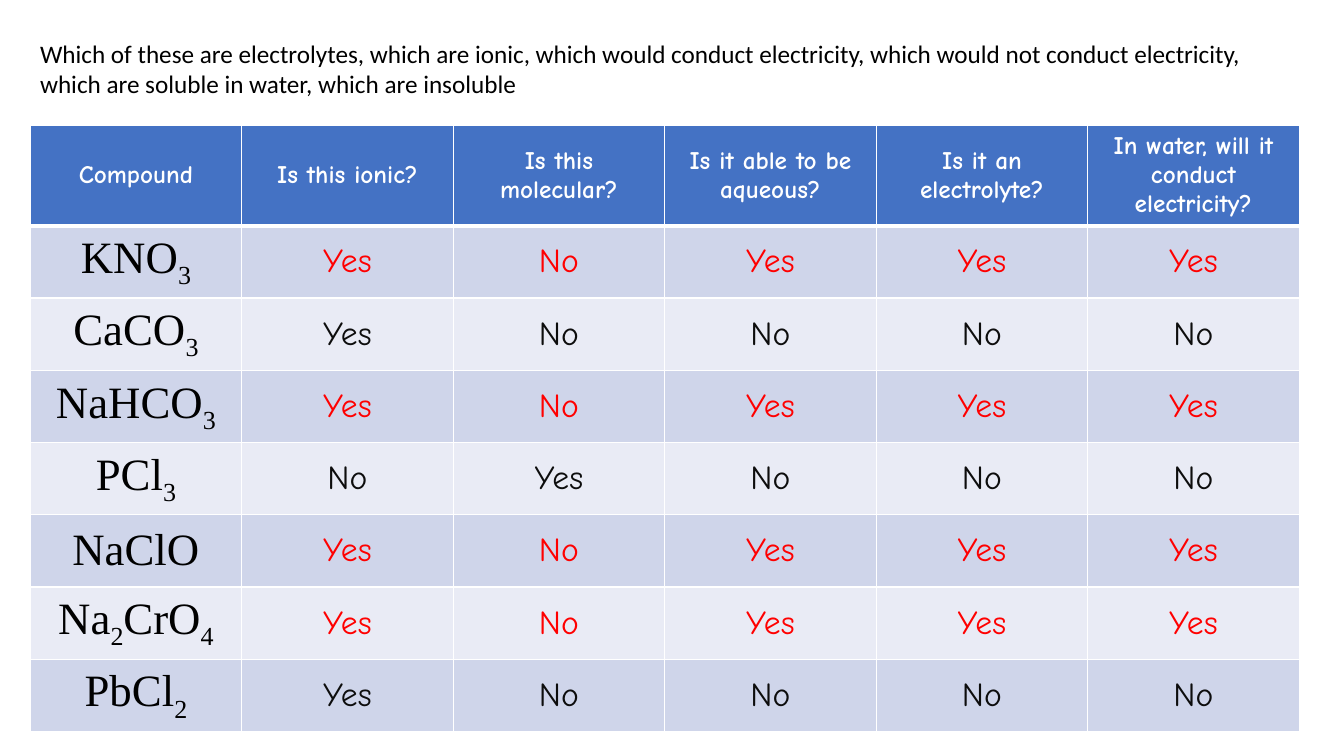
"""Build a slide that classifies compounds by bonding, solubility and conductivity."""
from dataclasses import dataclass
from itertools import groupby

from lxml.etree import SubElement
from pptx import Presentation
from pptx.dml.color import RGBColor
from pptx.enum.text import MSO_ANCHOR, MSO_AUTO_SIZE, PP_ALIGN
from pptx.oxml.ns import qn
from pptx.util import Cm, Pt

WHITE, BLACK, NEAR_BLACK, RED = "FFFFFF", "000000", "0D0D0D", "FF0000"
HEADER_FILL, BANDS = "4472C4", ("CFD5EA", "E9EBF5")
HAND, SERIF, SANS = "Comic Neue", "Times New Roman", "Calibri"
LEFT, COL_W, HEADER_H, ROW_H = 0.76, 5.33, 2.44, 1.82

QUESTION = (
    "Which of these are electrolytes, which are ionic, which would conduct "
    "electricity, which would not conduct electricity, which are soluble in "
    "water, which are insoluble"
)
HEADINGS = (
    "Compound", "Is this ionic?", "Is this molecular?", "Is it able to be aqueous?",
    "Is it an electrolyte?", "In water, will it conduct electricity?",
)


@dataclass(frozen=True)
class Compound:
    formula: str
    ionic: bool
    soluble: bool

    @property
    def answers(self) -> tuple[bool, ...]:
        return (self.ionic, not self.ionic) + (self.soluble,) * 3


@dataclass(frozen=True)
class Style:
    font: str
    size: int
    color: str
    bold: bool = False


COMPOUNDS = (
    Compound("KNO3", True, True),
    Compound("CaCO3", True, False),
    Compound("NaHCO3", True, True),
    Compound("PCl3", False, False),
    Compound("NaClO", True, True),
    Compound("Na2CrO4", True, True),
    Compound("PbCl2", True, False),
)


def rgb(value: str) -> RGBColor:
    return RGBColor.from_string(value)


def add_run(p, text: str, style: Style, subscript: bool = False) -> None:
    r = p.add_run()
    r.text = text
    r.font.name, r.font.size, r.font.bold = style.font, Pt(style.size), style.bold
    r.font.color.rgb = rgb(style.color)
    if subscript:
        r._r.get_or_add_rPr().set("baseline", "-25000")


def add_border(tc_pr, side: str, width: int) -> None:
    ln = SubElement(tc_pr, qn(f"a:{side}"), w=str(Pt(width)))
    SubElement(SubElement(ln, qn("a:solidFill")), qn("a:srgbClr"), val=WHITE)


def format_cell(cell, fill: str, top: int = 1, bottom: int = 1):
    tc_pr = cell._tc.get_or_add_tcPr()
    for side, width in (("lnL", 1), ("lnR", 1), ("lnT", top), ("lnB", bottom)):
        add_border(tc_pr, side, width)
    cell.fill.solid()
    cell.fill.fore_color.rgb = rgb(fill)
    cell.vertical_anchor = MSO_ANCHOR.MIDDLE
    p = cell.text_frame.paragraphs[0]
    p.alignment = PP_ALIGN.CENTER
    return p


def add_question(s) -> None:
    tf = s.shapes.add_textbox(Cm(LEFT), Cm(0.84), Cm(31.24), Cm(1.8)).text_frame
    tf.word_wrap = True
    tf.auto_size = MSO_AUTO_SIZE.SHAPE_TO_FIT_TEXT
    add_run(tf.paragraphs[0], QUESTION, Style(SANS, 18, BLACK))


def add_compound_table(s) -> None:
    rows, cols = len(COMPOUNDS) + 1, len(HEADINGS)
    height = HEADER_H + ROW_H * len(COMPOUNDS)
    table = s.shapes.add_table(
        rows, cols, Cm(LEFT), Cm(3.15), Cm(COL_W * cols), Cm(height)
    ).table
    for column in table.columns:
        column.width = Cm(COL_W)
    for i, row in enumerate(table.rows):
        row.height = Cm(ROW_H if i else HEADER_H)

    for col, heading in enumerate(HEADINGS):
        p = format_cell(table.cell(0, col), HEADER_FILL, bottom=3)
        add_run(p, heading, Style(HAND, 18, WHITE, True))

    for row, compound in enumerate(COMPOUNDS, 1):
        fill, top = BANDS[(row - 1) % 2], 3 if row == 1 else 1
        p = format_cell(table.cell(row, 0), fill, top)
        for is_digit, chars in groupby(compound.formula, str.isdigit):
            add_run(p, "".join(chars), Style(SERIF, 32, BLACK), is_digit)
        style = Style(HAND, 24, RED if compound.soluble else NEAR_BLACK)
        for col, answer in enumerate(compound.answers, 1):
            p = format_cell(table.cell(row, col), fill, top)
            add_run(p, "Yes" if answer else "No", style)


def main() -> None:
    prs = Presentation()
    prs.slide_width, prs.slide_height = Cm(33.87), Cm(19.05)
    s = prs.slides.add_slide(prs.slide_layouts[6])
    add_question(s)
    add_compound_table(s)
    prs.save("out.pptx")


if __name__ == "__main__":
    main()
